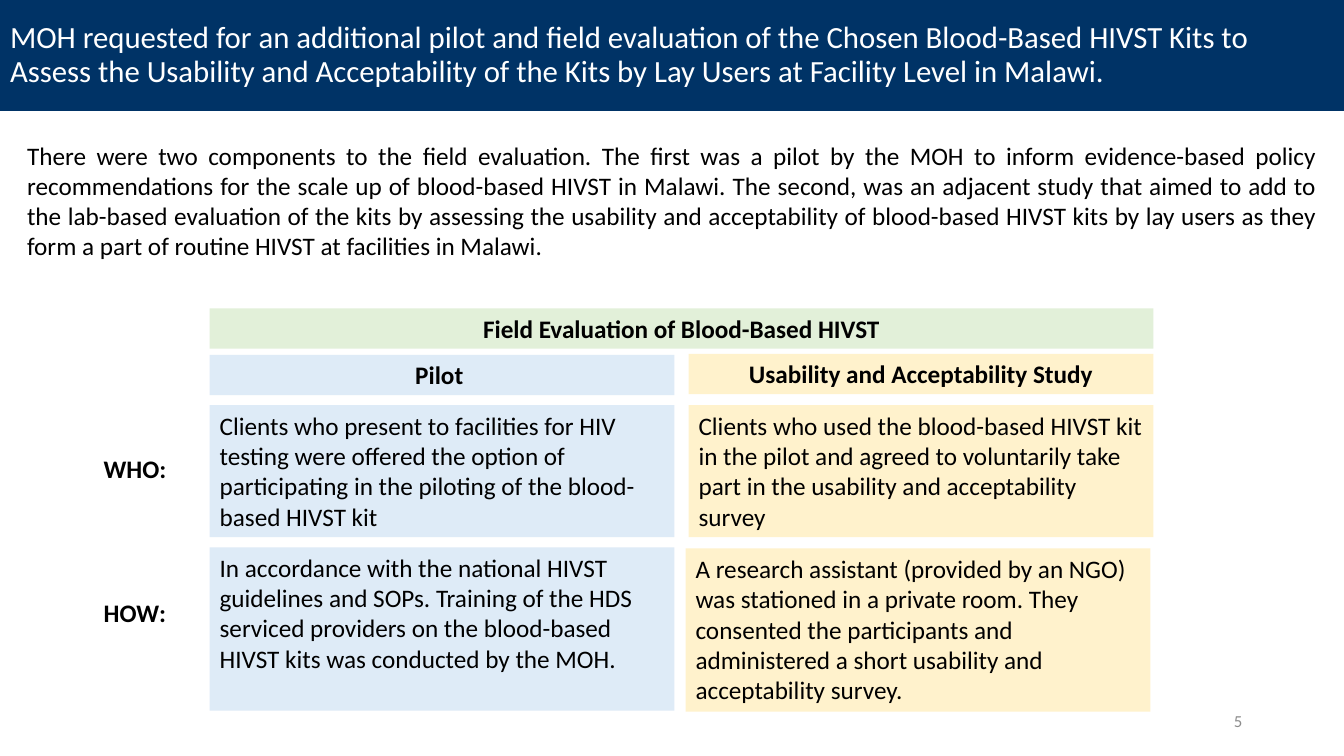
from dataclasses import dataclass

from pptx import Presentation
from pptx.dml.color import RGBColor
from pptx.enum.shapes import MSO_SHAPE
from pptx.enum.text import MSO_ANCHOR, MSO_AUTO_SIZE, PP_ALIGN
from pptx.util import Inches, Pt


@dataclass(frozen=True)
class Theme:
    font: str = "Calibri"
    navy: str = "003366"
    white: str = "FFFFFF"
    black: str = "000000"
    gray: str = "8C8C8C"
    green: str = "E2F0D9"
    blue: str = "DEEBF7"
    yellow: str = "FFF2CC"
    title: int = 22
    body: int = 18
    small: int = 12


T = Theme()


def write(sp, text, size=T.body, color=T.black, bold=False,
          align=PP_ALIGN.LEFT, anchor=MSO_ANCHOR.TOP):
    tf = sp.text_frame
    frame = {"word_wrap": True, "auto_size": MSO_AUTO_SIZE.NONE, "vertical_anchor": anchor}
    for name, value in frame.items():
        setattr(tf, name, value)
    p = tf.paragraphs[0]
    p.alignment = align
    r = p.add_run()
    r.text = text
    for name, value in {"name": T.font, "size": Pt(size), "bold": bold}.items():
        setattr(r.font, name, value)
    r.font.color.rgb = RGBColor.from_string(color)
    return p


def add_text(text, box, fill=None, **style):
    """Add a filled rectangle, or a plain text box when there is no fill."""
    place = [Inches(v) for v in box]
    if fill:
        sp = s.shapes.add_shape(MSO_SHAPE.RECTANGLE, *place)
        sp.shadow.inherit = False
        sp.fill.solid()
        sp.fill.fore_color.rgb = RGBColor.from_string(fill)
        sp.line.fill.background()
    else:
        sp = s.shapes.add_textbox(*place)
    write(sp, text, **style)


prs = Presentation()
prs.slide_width, prs.slide_height = Inches(13.33), Inches(7.5)
s = prs.slides.add_slide(prs.slide_layouts[5])

title = s.shapes.title
title.left, title.top = Inches(0), Inches(0)
title.width, title.height = prs.slide_width, Inches(1.1)
title.fill.solid()
title.fill.fore_color.rgb = RGBColor.from_string(T.navy)
p = write(
    title,
    "MOH requested for an additional pilot and field evaluation of the Chosen Blood-Based "
    "HIVST Kits to Assess the Usability and Acceptability of the Kits by Lay Users at "
    "Facility Level in Malawi.",
    size=T.title, color=T.white, anchor=MSO_ANCHOR.MIDDLE)
p.line_spacing = 0.9

add_text(
    "There were two components to the field evaluation. The first was a pilot by the MOH to "
    "inform evidence-based policy recommendations for the scale up of blood-based HIVST in "
    "Malawi. The second, was an adjacent study that aimed to add to the lab-based evaluation "
    "of the kits by assessing the usability and acceptability of blood-based HIVST kits by lay "
    "users as they form a part of routine HIVST at facilities in Malawi.",
    (0.17, 1.34, 12.99, 1.31), align=PP_ALIGN.JUSTIFY)

# Evaluation grid: one heading across two columns, then a row each for who and how
left, col_w, gap, head_h = 2.08, 4.61, 0.14, 0.4
heading = {"bold": True, "align": PP_ALIGN.CENTER}
add_text("Field Evaluation of Blood-Based HIVST",
         (left, 3.06, 2 * col_w + gap, head_h), T.green, **heading)

columns = [
    ("Pilot ", T.blue, 3.52, [
        (0, 4.02, 1.31,
         "Clients who present to facilities for HIV testing were offered the option of "
         "participating in the piloting of the blood-based HIVST kit"),
        (0, 5.43, 1.62,
         "In accordance with the national HIVST guidelines and SOPs. Training of the HDS "
         "serviced providers on the blood-based HIVST kits was conducted by the MOH."),
    ]),
    ("Usability and Acceptability Study", T.yellow, 3.51, [
        (0, 4.02, 1.31,
         "Clients who used the blood-based HIVST kit in the pilot and agreed to voluntarily "
         "take part in the usability and acceptability survey"),
        (-0.03, 5.44, 1.62,
         "A research assistant (provided by an NGO) was stationed in a private room. They "
         "consented the participants and administered a short usability and acceptability "
         "survey."),
    ]),
]
for i, (name, fill, head_top, cells) in enumerate(columns):
    x = left + i * (col_w + gap)
    add_text(name, (x, head_top, col_w, head_h), fill, **heading)
    for shift, top, height, text in cells:
        add_text(text, (x + shift, top, col_w, height), fill)

for label, top in [("WHO:", 4.45), ("HOW:", 5.88)]:
    add_text(label, (0.93, top, 0.9, head_h), bold=True)

add_text("5", (9.42, 6.95, 3, 0.4), size=T.small, color=T.gray,
         align=PP_ALIGN.RIGHT, anchor=MSO_ANCHOR.MIDDLE)

prs.save("out.pptx")
